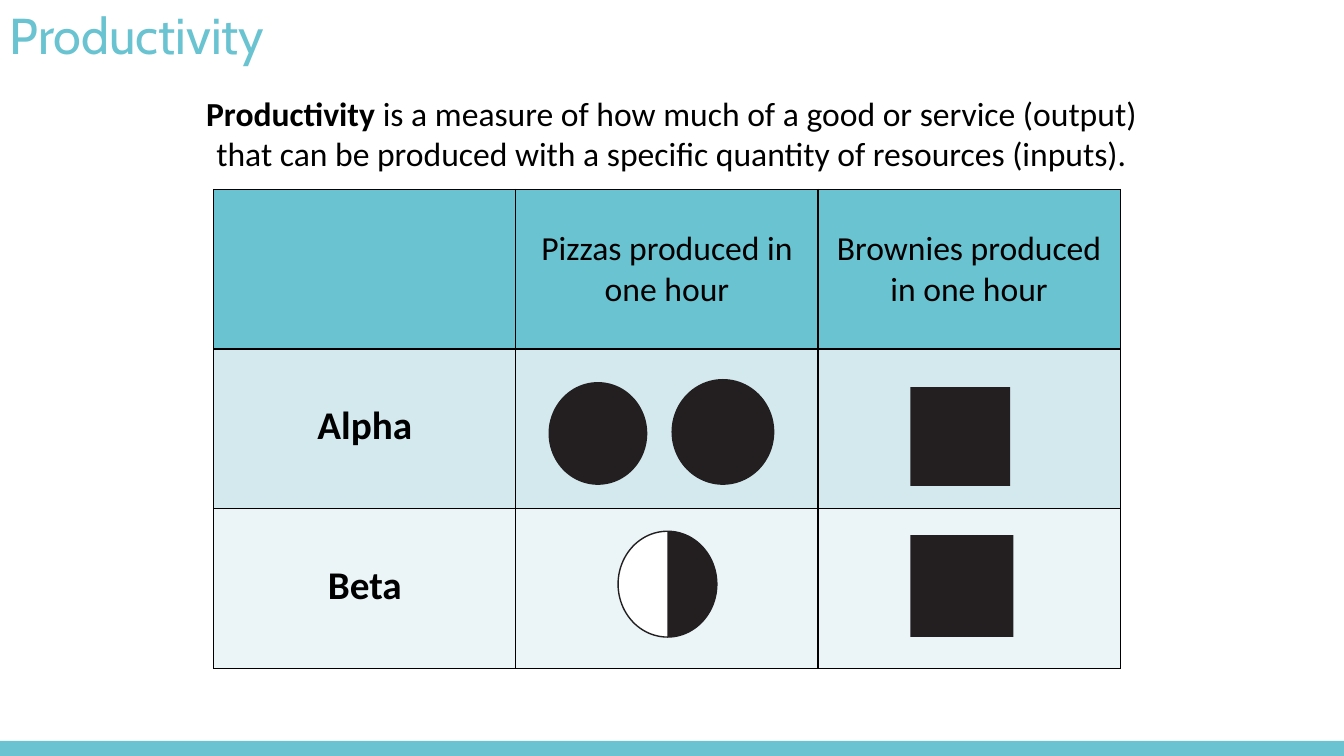
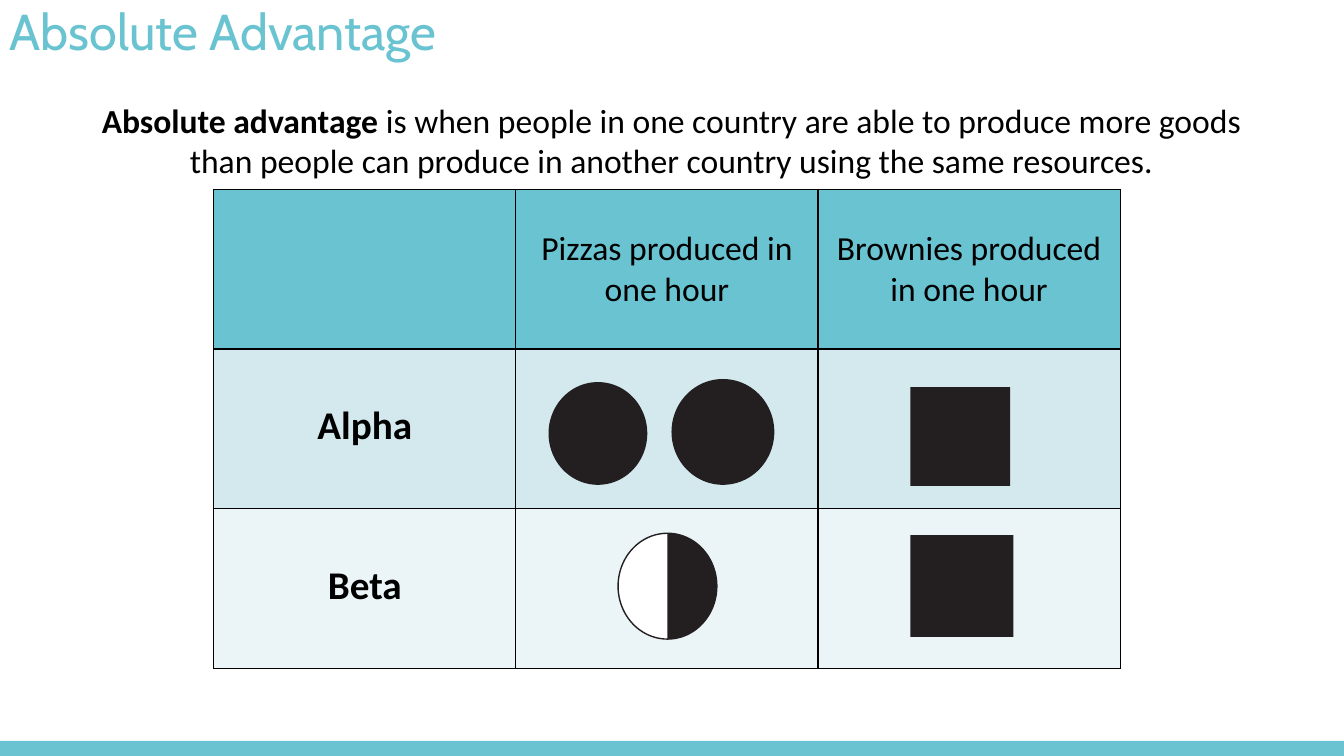
"""Build two slides that compare the productivity of Alpha and Beta."""
from lxml.etree import SubElement
from pptx import Presentation
from pptx.dml.color import RGBColor
from pptx.enum.shapes import MSO_SHAPE
from pptx.enum.text import MSO_ANCHOR, PP_ALIGN
from pptx.oxml.ns import qn
from pptx.util import Inches, Pt

TEAL = RGBColor(0x69, 0xC3, 0xD1)
LIGHT_TEAL = RGBColor(0xD4, 0xE9, 0xEE)
PALE_TEAL = RGBColor(0xEB, 0xF5, 0xF7)
INK = RGBColor(0x23, 0x1F, 0x20)
BLACK = RGBColor(0, 0, 0)
WHITE = RGBColor(0xFF, 0xFF, 0xFF)

ROW_FILLS = [TEAL, LIGHT_TEAL, PALE_TEAL]
CELL_TEXTS = [
    ["", "Pizzas produced in one hour", "Brownies produced in one hour"],
    ["Alpha", "", ""],
    ["Beta", "", ""],
]
GOODS = [
    (MSO_SHAPE.OVAL, 5.44, 3.79, 0.98, 1.02),
    (MSO_SHAPE.OVAL, 6.66, 3.76, 1.02, 1.05),
    (MSO_SHAPE.RECTANGLE, 9.03, 3.84, 0.99, 0.98),
    (MSO_SHAPE.RECTANGLE, 9.03, 5.31, 1.02, 1.01),
]
SLIDES = [
    {
        "title": "Productivity",
        "title_top": 0.05,
        "definition_box": (1.9, 0.87, 9.52, 0.91),
        "term": "Productivity ",
        "meaning": "is a measure of how much of a good or service (output) "
                   "that can be produced with a specific quantity of resources (inputs).",
        "half_pizza_top": 5.27,
    },
    {
        "title": "Absolute Advantage",
        "title_top": 0.01,
        "definition_box": (0.64, 0.94, 12.04, 0.91),
        "term": "Absolute advantage ",
        "meaning": "is when people in one country are able to produce more goods "
                   "than people can produce in another country using the same resources.",
        "half_pizza_top": 5.29,
    },
]


def add_filled_shape(slide, kind, left, top, width, height, color):
    shape = slide.shapes.add_shape(
        kind, Inches(left), Inches(top), Inches(width), Inches(height))
    shape.shadow.inherit = False
    shape.fill.solid()
    shape.fill.fore_color.rgb = color
    shape.line.fill.background()
    return shape


def add_borders(cell):
    properties = cell._tc.get_or_add_tcPr()
    for side in ("a:lnL", "a:lnR", "a:lnT", "a:lnB"):
        line = SubElement(properties, qn(side), w=str(Pt(1)))
        fill = SubElement(line, qn("a:solidFill"))
        SubElement(fill, qn("a:srgbClr"), val=str(BLACK))


presentation = Presentation()
presentation.slide_width = Inches(13.33)
presentation.slide_height = Inches(7.5)

for content in SLIDES:
    slide = presentation.slides.add_slide(presentation.slide_layouts[6])
    add_filled_shape(slide, MSO_SHAPE.RECTANGLE, 0, 7.35, 13.33, 0.15, TEAL)

    title = slide.shapes.add_textbox(
        0, Inches(content["title_top"]), Inches(11.5), Inches(0.66))
    title.text_frame.word_wrap = True
    title.text_frame.vertical_anchor = MSO_ANCHOR.MIDDLE
    paragraph = title.text_frame.paragraphs[0]
    paragraph.text = content["title"]
    paragraph.line_spacing = 0.9
    paragraph.font.name = "Cabin"
    paragraph.font.size = Pt(36)
    paragraph.font.color.rgb = TEAL

    definition = slide.shapes.add_textbox(
        *[Inches(length) for length in content["definition_box"]])
    definition.text_frame.word_wrap = True
    paragraph = definition.text_frame.paragraphs[0]
    paragraph.alignment = PP_ALIGN.CENTER
    paragraph.font.name = "Calibri"
    paragraph.font.size = Pt(24)
    paragraph.font.color.rgb = BLACK
    term = paragraph.add_run()
    term.text = content["term"]
    term.font.bold = True
    paragraph.add_run().text = content["meaning"]

    table = slide.shapes.add_table(
        3, 3, Inches(2.12), Inches(1.88), Inches(8.99), Inches(4.75)).table
    table.first_row = False
    table.horz_banding = False
    for row, texts in enumerate(CELL_TEXTS):
        for column, text in enumerate(texts):
            cell = table.cell(row, column)
            add_borders(cell)
            cell.fill.solid()
            cell.fill.fore_color.rgb = ROW_FILLS[row]
            if not text:
                continue
            cell.vertical_anchor = MSO_ANCHOR.MIDDLE
            paragraph = cell.text_frame.paragraphs[0]
            paragraph.text = text
            paragraph.alignment = PP_ALIGN.CENTER
            paragraph.font.name = "Calibri"
            paragraph.font.size = Pt(24 if row == 0 else 28)
            paragraph.font.bold = row > 0
            paragraph.font.color.rgb = BLACK
            if row > 0:
                cell.margin_bottom = Inches(0.1)

    for good in GOODS:
        add_filled_shape(slide, *good, INK)

    half_pizza_box = (6.13, content["half_pizza_top"], 0.98, 1.05)
    pizza_outline = add_filled_shape(slide, MSO_SHAPE.OVAL, *half_pizza_box, WHITE)
    pizza_outline.line.color.rgb = INK
    pizza_outline.line.width = Pt(1)
    half_pizza = add_filled_shape(slide, MSO_SHAPE.CHORD, *half_pizza_box, INK)
    half_pizza.adjustments[0] = 162
    half_pizza.adjustments[1] = 54

presentation.save("out.pptx")
